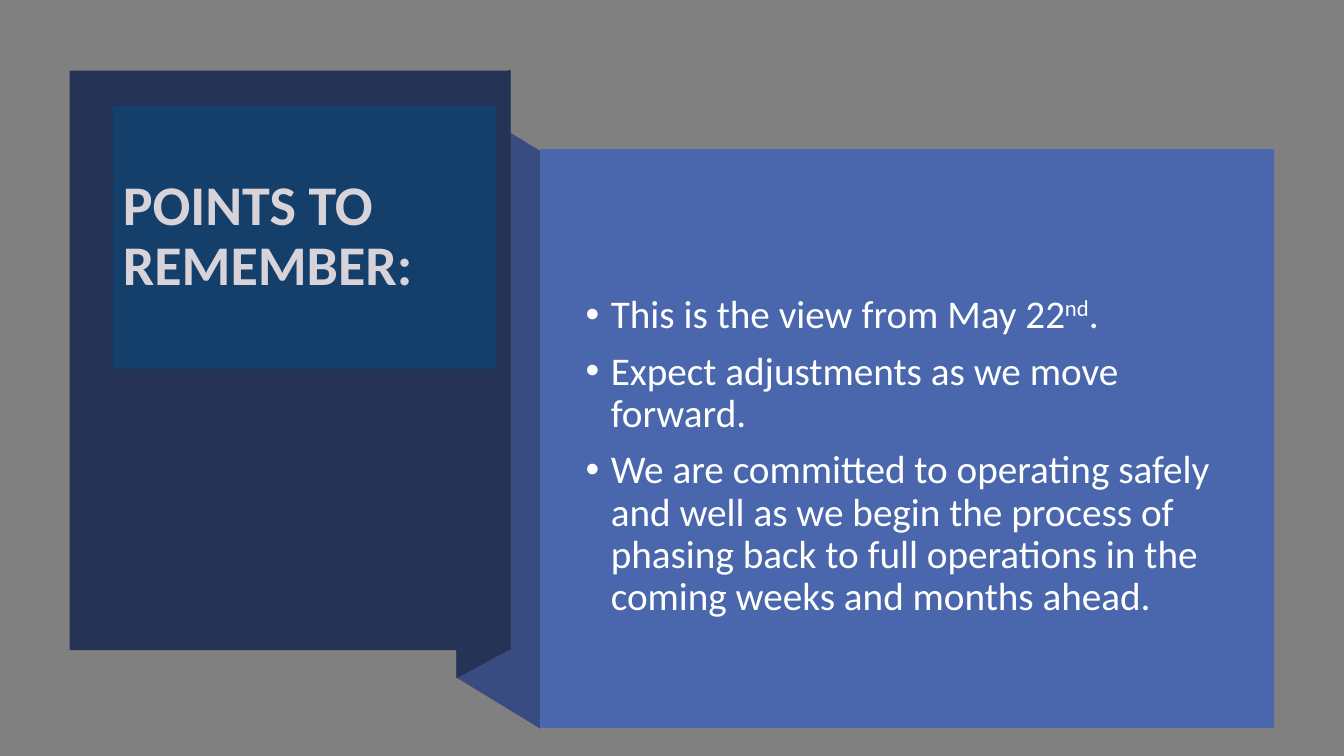
"""Build a slide with a folded-ribbon panel, a title and three points to remember."""
from pptx import Presentation
from pptx.dml.color import RGBColor
from pptx.enum.shapes import MSO_SHAPE
from pptx.enum.text import MSO_ANCHOR, MSO_AUTO_SIZE, PP_ALIGN
from pptx.util import Pt

TITLE = "POINTS TO REMEMBER:"
POINTS = [
    [("This is the view from May 22", 0), ("nd", 30000), (".", 0)],
    [("Expect adjustments as we move forward.", 0)],
    [("We are committed to operating safely and well as we begin the process of "
      "phasing back to full operations in the coming weeks and months ahead.", 0)],
]
COLORS = {"back": "808080", "fold": "384C81", "navy": "253356", "plate": "143F6A",
          "panel": "4A66AC", "title": "D8D3D9", "text": "FEFFFF"}
FOLDS = [
    ("fold", [(386, 520.6), (326, 484), (326, 71.3), (386, 108)]),
    ("navy", [(364.5, 463.7), (326, 484.5), (326, 70.6), (364.5, 49.7)]),
]
CARD = (49.7, 50.4, 315.1, 414)
PANEL = (385.9, 106.6, 524.2, 413.3)
PLATE = (80.6, 75.6, 273.6, 188)
BODY = (411.1, 176.2, 468.7, 300.5)


def color(name):
    return RGBColor.from_string(COLORS[name])


def paint(shape, name):
    shape.fill.solid()
    shape.fill.fore_color.rgb = color(name)
    shape.line.fill.background()
    shape.shadow.inherit = False


def block(box, name):
    paint(slide.shapes.add_shape(MSO_SHAPE.RECTANGLE, *map(Pt, box)), name)


def place(holder, box):
    holder.left, holder.top, holder.width, holder.height = map(Pt, box)
    slide.shapes._spTree.append(holder._element)
    frame = holder.text_frame
    frame.word_wrap = True
    frame.auto_size = MSO_AUTO_SIZE.NONE
    frame.vertical_anchor = MSO_ANCHOR.MIDDLE
    return frame


def write(para, text, size, name, bold=False, raised=0):
    para.alignment = PP_ALIGN.LEFT
    para.line_spacing = 0.9
    run = para.add_run()
    run.text = text
    font = run.font
    font.name, font.size, font.bold = "Calibri", Pt(size), bold
    font.color.rgb = color(name)
    if raised:
        run._r.get_or_add_rPr().set("baseline", str(raised))


deck = Presentation()
deck.slide_width, deck.slide_height = Pt(960), Pt(540)
slide = deck.slides.add_slide(deck.slide_layouts[1])
slide.background.fill.solid()
slide.background.fill.fore_color.rgb = color("back")
title, body = slide.placeholders

for name, spots in FOLDS:
    edge = slide.shapes.build_freeform(*map(Pt, spots[0]))
    edge.add_line_segments([(Pt(x), Pt(y)) for x, y in spots[1:]], close=True)
    paint(edge.convert_to_shape(), name)
block(CARD, "navy")

frame = place(title, PLATE)
title.fill.solid()
title.fill.fore_color.rgb = color("plate")
write(frame.paragraphs[0], TITLE, 40, "title", bold=True)

block(PANEL, "panel")
frame = place(body, BODY)
for i, runs in enumerate(POINTS):
    para = frame.add_paragraph() if i else frame.paragraphs[0]
    para.space_before = Pt(10)
    props = para._p.get_or_add_pPr()
    props.set("marL", str(Pt(18)))
    props.set("indent", str(-Pt(18)))
    for text, raised in runs:
        write(para, text, 28, "text", raised=raised)

deck.save("out.pptx")
